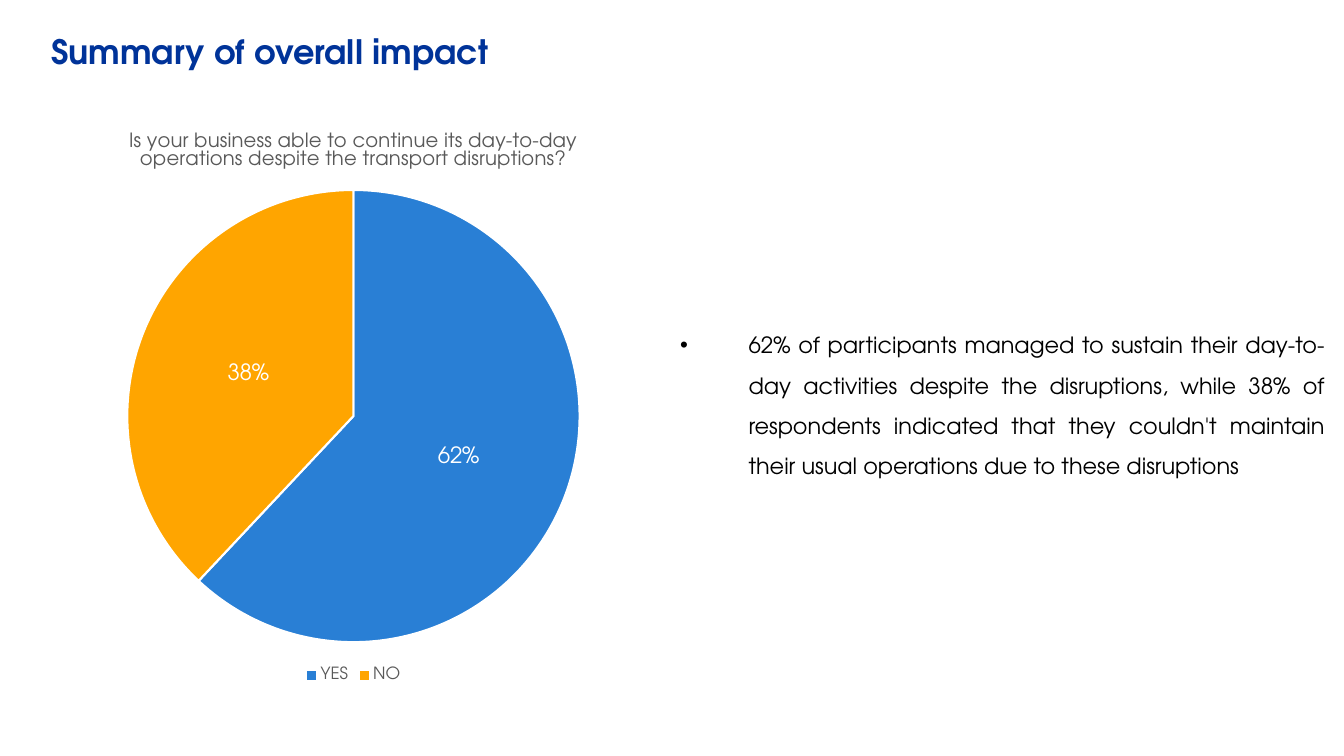
import pptx
import pptx.chart.data
import pptx.dml.color
import pptx.enum.chart
import pptx.enum.text
import pptx.oxml
import pptx.oxml.ns
import pptx.util

RGBColor = pptx.dml.color.RGBColor
NAVY = RGBColor(0x00, 0x33, 0x99)
BLUE = RGBColor(0x29, 0x7F, 0xD5)
ORANGE = RGBColor(0xFF, 0xA5, 0x00)
GREY = RGBColor(0x59, 0x59, 0x59)
BLACK = RGBColor(0x00, 0x00, 0x00)
WHITE = RGBColor(0xFF, 0xFF, 0xFF)

FONT = "TeX Gyre Adventor"
WIDTH, HEIGHT = 13.33, 7.5
INSET = 0.08
QUESTION = ("Is your business able to continue its day-to-day operations "
            "despite the transport disruptions?")
ANSWERS = {"YES": (0.62, BLUE), "NO": (0.38, ORANGE)}
FINDING = ("62% of participants managed to sustain their day-to-day activities "
           "despite the disruptions, while 38% of respondents indicated that "
           "they couldn't maintain their usual operations due to these disruptions")


def share(x, y, w, h):
    return [pptx.util.Inches(v) for v in
            (x * WIDTH, y * HEIGHT, w * WIDTH, h * HEIGHT)]


def style(font, size, color, bold=False):
    font.name = FONT
    font.size = pptx.util.Pt(size)
    font.bold = bold
    font.color.rgb = color


def add_text(slide, box, text, size, color, bold=False):
    tf = slide.shapes.add_textbox(*box).text_frame
    tf.word_wrap = True
    tf.margin_left = tf.margin_right = pptx.util.Inches(INSET)
    tf.margin_top = tf.margin_bottom = pptx.util.Inches(INSET)
    tf.text = text
    style(tf.paragraphs[0].runs[0].font, size, color, bold)
    return tf


def add_title(slide, box):
    tf = add_text(slide, box, "Summary of overall impact", 24, NAVY, True)
    tf.vertical_anchor = pptx.enum.text.MSO_ANCHOR.MIDDLE


def add_finding(slide, box):
    p = add_text(slide, box, FINDING, 16, BLACK).paragraphs[0]
    p.alignment = pptx.enum.text.PP_ALIGN.JUSTIFY
    p.line_spacing = 1.5
    pPr = p._p.get_or_add_pPr()
    indent = pptx.util.Inches(0.68)
    pPr.set("marL", str(indent))
    pPr.set("indent", str(-indent))
    ns = pptx.oxml.ns.nsdecls("a")
    pPr.append(pptx.oxml.parse_xml(f'<a:buFont {ns} typeface="Arial"/>'))
    pPr.append(pptx.oxml.parse_xml(f'<a:buChar {ns} char="•"/>'))


def add_pie(slide, box):
    data = pptx.chart.data.CategoryChartData(number_format="0%")
    data.categories = list(ANSWERS)
    data.add_series(QUESTION, [value for value, _ in ANSWERS.values()])
    chart = slide.shapes.add_chart(
        pptx.enum.chart.XL_CHART_TYPE.PIE, *box, data).chart
    style(chart.font, 10, BLACK)

    chart.has_title = True
    tf = chart.chart_title.text_frame
    tf.text = QUESTION
    style(tf.paragraphs[0].runs[0].font, 14, GREY)
    chart.chart_title.include_in_layout = False

    chart.has_legend = True
    chart.legend.position = pptx.enum.chart.XL_LEGEND_POSITION.BOTTOM
    chart.legend.include_in_layout = False
    style(chart.legend.font, 12, GREY)

    plot = chart.plots[0]
    plot.vary_by_categories = True
    series = plot.series[0]
    for i, (_, color) in enumerate(ANSWERS.values()):
        fmt = series.points[i].format
        fmt.fill.solid()
        fmt.fill.fore_color.rgb = color
        fmt.line.color.rgb = WHITE
        fmt.line.width = pptx.util.Pt(1.5)

    labels = series.data_labels
    labels.show_value = True
    labels.show_percentage = False
    labels.number_format = "0%"
    labels.number_format_is_linked = False
    labels.position = pptx.enum.chart.XL_LABEL_POSITION.CENTER
    style(labels.font, 16, WHITE)


def build_summary(prs):
    slide = prs.slides.add_slide(prs.slide_layouts[6])
    add_title(slide, share(0.032, 0.027, 0.94, 0.081))
    add_finding(slide, share(0.5, 0.41, 0.492, 0.263))
    add_pie(slide, share(0.017, 0.145, 0.492, 0.764))


def main():
    prs = pptx.Presentation()
    prs.slide_width = pptx.util.Inches(WIDTH)
    prs.slide_height = pptx.util.Inches(HEIGHT)
    build_summary(prs)
    prs.save("out.pptx")


if __name__ == "__main__":
    main()
